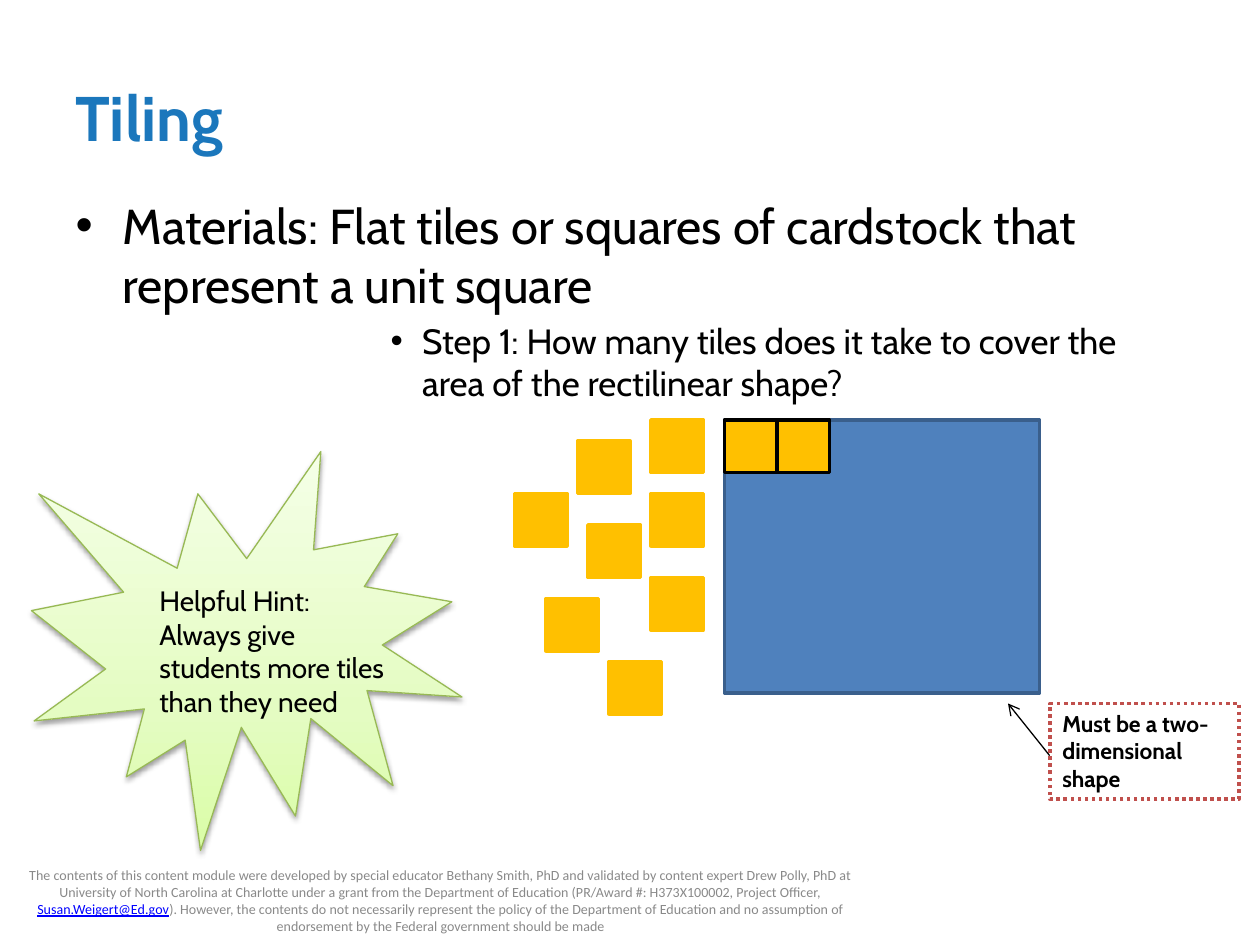
import copy
import pptx
import pptx.util
import pptx.dml.color
import pptx.enum.dml
import pptx.enum.shapes
import pptx.enum.text
import pptx.oxml
import pptx.oxml.ns

RGB = pptx.dml.color.RGBColor
Pt = pptx.util.Pt
KIND = pptx.enum.shapes.MSO_SHAPE
ALIGN = pptx.enum.text.PP_ALIGN
ANCHOR = pptx.enum.text.MSO_ANCHOR
FIT = pptx.enum.text.MSO_AUTO_SIZE
DOTS = pptx.enum.dml.MSO_LINE.ROUND_DOT
NS = pptx.oxml.ns.nsdecls("a")
SCALE = 9525  # EMU in one px, 96 px to the inch

BLACK, WHITE = RGB(0, 0, 0), RGB(255, 255, 255)
TITLE = RGB(0x1B, 0x77, 0xBC)
GREY = RGB(0x89, 0x89, 0x89)
LINK = RGB(0, 0, 255)
BLUE, NAVY = RGB(0x4F, 0x81, 0xBD), RGB(0x3A, 0x5F, 0x8C)
GOLD = RGB(0xFF, 0xC0, 0)
RED = RGB(0xC0, 0x50, 0x4D)
LEAF = RGB(0x98, 0xB9, 0x55)
FADE = [(0, RGB(0xDA, 0xFD, 0xA7)), (0.35, RGB(0xE4, 0xFC, 0xC2)),
        (1, RGB(0xF5, 0xFF, 0xE7))]

# Content
HEAD = "Tiling"
LIST = [  # text, level, left indent, hanging indent, size
    ("Materials: Flat tiles or squares of cardstock that represent a unit square",
     0, 36, 36, 28),
    ("Step 1: How many tiles does it take to cover the area of the rectilinear shape?",
     5, 264, 24, 20),
]
HINT = ["Helpful Hint:", "Always give students more tiles than they need"]
NOTE = "Must be a two-dimensional shape"
CREDIT = [
    ("The contents of this content module were developed by special educator "
     "Bethany Smith, PhD and validated by content expert Drew Polly, PhD at "
     "University of North Carolina at Charlotte under a grant from the Department "
     "of Education (PR/Award #: H373X100002, Project Officer, ", GREY, False),
    ("Susan.Weigert@Ed.gov", LINK, True),
    ("). However, the contents do not necessarily represent the policy of the "
     "Department of Education and no assumption of endorsement by the Federal "
     "government should be made", GREY, False),
]

# Places in px
TILE = 40
AREA = (552, 320, 240, 208)
LOOSE = [(496, 320), (440, 336), (496, 376), (392, 376), (448, 400),
         (496, 440), (416, 456), (464, 504)]
LAID = 2  # tiles already laid in the area


def emu(*nums):
    return [n * SCALE for n in nums]


def style(font, color, **vals):
    for key, val in vals.items():
        setattr(font, key, val)
    font.color.rgb = color


def place(shape, *box):
    for key, val in zip(("left", "top", "width", "height"), emu(*box)):
        setattr(shape, key, val)


def block(shapes, kind, box, fill, line, width):
    shape = shapes.add_shape(kind, *emu(*box))
    shape.shadow.inherit = False
    if fill is not None:
        shape.fill.solid()
        shape.fill.fore_color.rgb = fill
    shape.line.color.rgb = line
    shape.line.width = Pt(width)
    return shape


def write(shape, lines, **vals):
    frame = shape.text_frame
    frame.word_wrap = True
    frame.text = "\n".join(lines)
    for para in frame.paragraphs:
        para.alignment = ALIGN.LEFT
        style(para.runs[0].font, BLACK, name="Cabin", **vals)


def bullet(para, left, hang):
    props = para._p.get_or_add_pPr()
    props.set("marL", str(left * SCALE))
    props.set("indent", str(-hang * SCALE))
    for xml in (f'<a:buFont {NS} typeface="Arial"/>', f'<a:buChar {NS} char="•"/>'):
        props.append(pptx.oxml.parse_xml(xml))


deck = pptx.Presentation()
deck.slide_width, deck.slide_height = emu(960, 720)
slide = deck.slides.add_slide(deck.slide_layouts[1])
shapes = slide.shapes

# Title
title = shapes.title
place(title, 48, 29, 864, 120)
title.text_frame.vertical_anchor = ANCHOR.MIDDLE
write(title, [HEAD], size=Pt(36), bold=True)
title.text_frame.paragraphs[0].runs[0].font.color.rgb = TITLE

# Bulleted list
body = slide.placeholders[1]
place(body, 48, 144, 864, 461)
frame = body.text_frame
frame.auto_size = FIT.NONE
for num, (text, level, left, hang, size) in enumerate(LIST):
    para = frame.add_paragraph() if num else frame.paragraphs[0]
    para.level = level
    para.space_before = Pt(size * 0.2 if num else 0)
    bullet(para, left, hang)
    run = para.add_run()
    run.text = text
    style(run.font, BLACK, name="Cabin", size=Pt(size))

# Credit line
credit = shapes.add_textbox(*emu(0, 667, 672, 38)).text_frame
credit.word_wrap = True
credit.vertical_anchor = ANCHOR.MIDDLE
para = credit.paragraphs[0]
para.alignment = ALIGN.CENTER
for text, color, under in CREDIT:
    run = para.add_run()
    run.text = text
    style(run.font, color, name="Calibri", size=Pt(8), underline=under)

# Hint burst with gradient and shadow
burst = block(shapes, KIND.EXPLOSION1, (24, 344, 328, 304), None, LEAF, 0.75)
burst.fill.gradient()
burst.fill.gradient_angle = 90
stops = burst._element.spPr.find(".//" + pptx.oxml.ns.qn("a:gsLst"))
stops.append(copy.deepcopy(stops[-1]))
for stop, (pos, color) in zip(burst.fill.gradient_stops, FADE):
    stop.position = pos
    stop.color.rgb = color
burst._element.spPr.find(pptx.oxml.ns.qn("a:effectLst")).append(pptx.oxml.parse_xml(
    f'<a:outerShdw {NS} blurRad="{Pt(3.1)}" dist="{Pt(1.6)}" dir="5400000" '
    'rotWithShape="0"><a:srgbClr val="000000"><a:alpha val="38000"/>'
    '</a:srgbClr></a:outerShdw>'))
write(shapes.add_textbox(*emu(112, 440, 200, 113)), HINT, size=Pt(16))

# Arrow from the note to the area
arrow = shapes.add_connector(pptx.enum.shapes.MSO_CONNECTOR.STRAIGHT,
                             *emu(800, 576, 768, 536))
arrow.line.color.rgb = BLACK
arrow.line.width = Pt(0.75)
arrow.line._get_or_add_ln().append(
    pptx.oxml.parse_xml(f'<a:tailEnd {NS} type="arrow"/>'))
arrow._element.spPr.append(pptx.oxml.parse_xml(f'<a:effectLst {NS}/>'))

# Note
note = block(shapes, KIND.RECTANGLE, (800, 536, 144, 73), WHITE, RED, 2)
note.line.dash_style = DOTS
note.text_frame.vertical_anchor = ANCHOR.TOP
write(note, [NOTE], size=Pt(13), bold=True)

# Area and tiles
group = shapes.add_group_shape().shapes
block(group, KIND.RECTANGLE, AREA, BLUE, NAVY, 2)
tiles = [(spot, GOLD) for spot in LOOSE]
tiles += [((AREA[0] + n * TILE, AREA[1]), BLACK) for n in range(LAID)]
for spot, edge in tiles:
    block(group, KIND.RECTANGLE, (*spot, TILE, TILE), GOLD, edge, 2)

deck.save("out.pptx")
